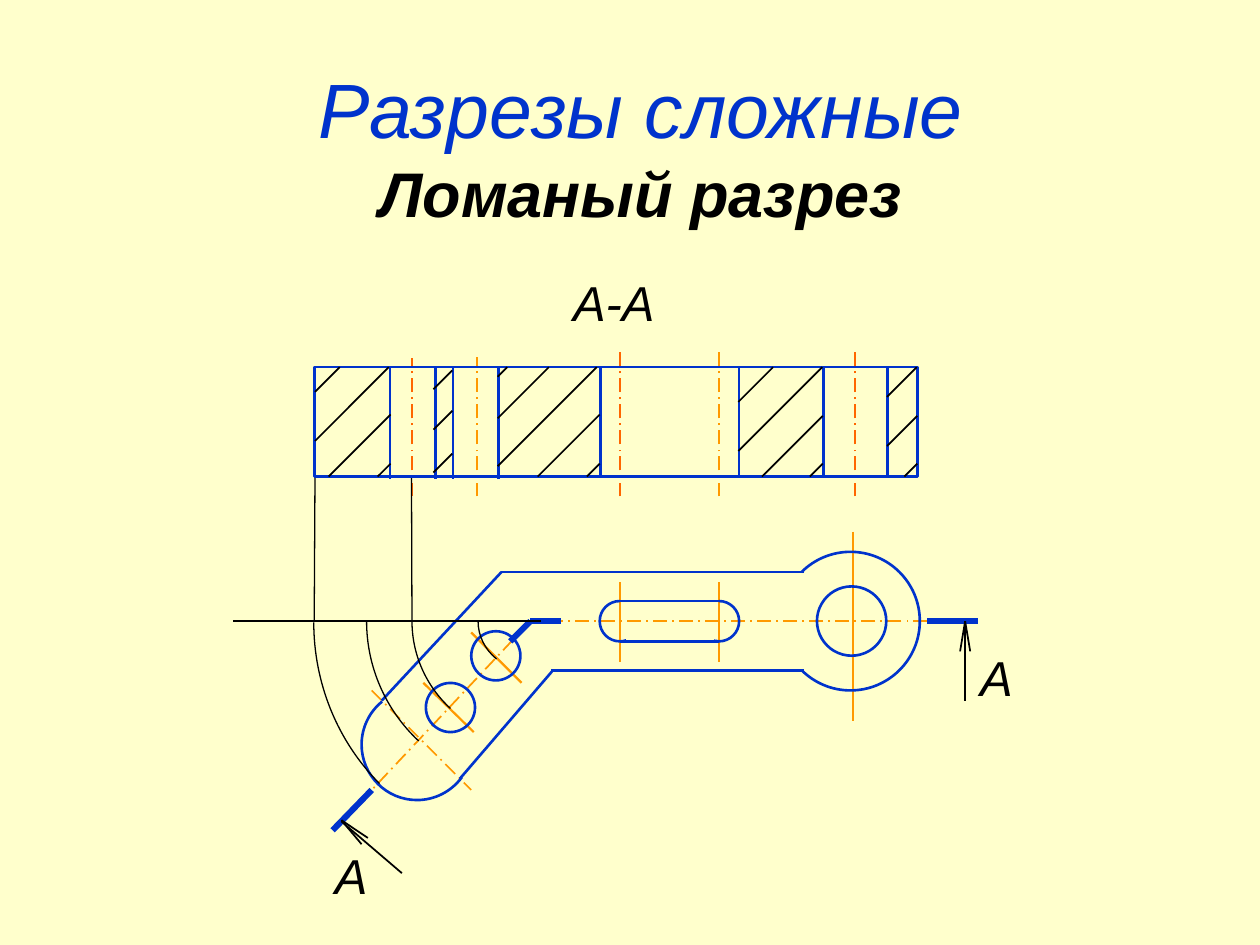
"""Build the slide on a broken section: section view A-A above the plan of a bent lever."""
from copy import deepcopy
from dataclasses import dataclass
from math import ceil, cos, floor, radians, sin, tan
from typing import NamedTuple, Optional

from lxml.etree import SubElement
from pptx import Presentation
from pptx.dml.color import RGBColor
from pptx.enum.dml import MSO_LINE_DASH_STYLE as Dash
from pptx.enum.shapes import MSO_CONNECTOR as Connector, MSO_SHAPE as Shape
from pptx.enum.text import MSO_ANCHOR as Anchor, MSO_AUTO_SIZE as AutoSize, PP_ALIGN as Align
from pptx.oxml.ns import qn
from pptx.util import Inches, Pt

CREAM = RGBColor(0xFF, 0xFF, 0xCC)
BLUE = RGBColor(0x00, 0x33, 0xCC)
BLACK = RGBColor(0x00, 0x00, 0x00)
AMBER = RGBColor(0xFF, 0x99, 0x00)
ORANGE = RGBColor(0xFF, 0x66, 0x00)
FONT = "Arial"

COLUMNS, ROWS = 1000, 750
CELL = Inches(10) // COLUMNS
TOP, BOTTOM, AXIS = 291.4, 378.2, 493
SLOT_LEFT, SLOT_RIGHT = 492, 570.6


class Pen(NamedTuple):
    color: RGBColor
    width: float
    dash: Optional[Dash] = None


class Line(NamedTuple):
    x1: float
    y1: float
    x2: float
    y2: float


class Circle(NamedTuple):
    left: float
    top: float
    size: float


class Arc(NamedTuple):
    x: float
    y: float
    radius: float
    start: float
    end: float
    stretch: float = 1

    def point(self, angle: float, lean: float = 0) -> list[int]:
        """Give the point at an angle, moved along the tangent by a share of the radius."""
        turn = radians(angle)
        across, down = cos(turn) - lean * sin(turn), sin(turn) + lean * cos(turn)
        return cells(self.x + self.radius * across, self.y + self.radius * self.stretch * down)

    def nodes(self) -> list[float]:
        """List the end angles and the quarter turns between them."""
        low, high = sorted((self.start, self.end))
        quarters = [90 * turn for turn in range(floor(low / 90) + 1, ceil(high / 90))]
        return sorted([low, *quarters, high], reverse=self.start > self.end)


@dataclass(frozen=True)
class Hatch:
    left: int
    right: int
    diagonals: tuple[int, ...]

    def lines(self) -> list[Line]:
        """Clip each 45 degree diagonal (column + row = constant) to the block."""
        spans = [(min(self.right, d - TOP), max(self.left, d - BOTTOM)) for d in self.diagonals]
        return [Line(x1, d - x1, x2, d - x2) for d, (x1, x2) in zip(self.diagonals, spans)]


@dataclass(frozen=True)
class Label:
    text: str
    left: int
    top: int
    width: int
    wrap: bool = False


OUTLINE = Pen(BLUE, 1.5)
CUT = Pen(BLUE, 3.5)
THIN = Pen(BLACK, 1)
PROJECTION = Pen(BLACK, 0.75)
CENTER = Pen(AMBER, 1)
CROSS = Pen(AMBER, 1.25)
CENTER_DASH = Pen(AMBER, 1, Dash.LONG_DASH_DOT)
SECTION_DASH = Pen(ORANGE, 1, Dash.LONG_DASH_DOT)

LINES = {
    CENTER_DASH: [
        Line(736, AXIS, 421, AXIS), Line(295, 548, 374, 627), Line(421, AXIS, 295, 627),
        Line(SLOT_RIGHT, 394, SLOT_RIGHT, 276), Line(378.4, 394, 378.4, 283),
    ],
    SECTION_DASH: [Line(x, 394, x, top) for x, top in ((492, 276), (678.6, 276), (327, 284))],
    CENTER: [Line(x, 462, x, 525) for x in (SLOT_RIGHT, SLOT_LEFT)] + [Line(677, 422, 677, 572)],
    OUTLINE: [
        Line(638, 454, 398, 454), Line(638, 532, 437, 532),
        Line(438, 533, 365, 618), Line(398, 454, 303, 556),
        *[Line(SLOT_LEFT, y, SLOT_RIGHT, y) for y in (477, 509)],
        *[Line(x, TOP, x, BOTTOM) for x in (704.6, 653.4, 586.6, 476.4)],
        *[Line(x, TOP, x, 380) for x in (395.4, 359.6, 345.4, 309.6)],
    ],
    CROSS: [Line(374, 502, 414, 542), Line(336, 542, 376, 581)],
    CUT: [
        Line(295, 627, 264, 659), Line(421, AXIS, 405, 509),
        Line(421, AXIS, 445, AXIS), Line(736, AXIS, 776, AXIS),
    ],
    THIN: [Line(429, AXIS, 185, AXIS)],
    PROJECTION: [Line(249.4, AXIS, 250, BOTTOM), Line(327, AXIS, 326.6, BOTTOM)],
}
ARCS = {
    OUTLINE: [
        Arc(675, AXIS, 55, 135, -135), Arc(SLOT_RIGHT, AXIS, 16, -90, 104),
        Arc(SLOT_LEFT, AXIS, 16, 270, 72), Arc(331, 591, 44, 36, 231),
    ],
    PROJECTION: [
        Arc(423, AXIS, 43.6, 131.5, 180, 0.92), Arc(421, AXIS, 94, 132.5, 180),
        Arc(421, AXIS, 130, 133, 180), Arc(420, 494, 171, 134, 180, 1.04),
    ],
}
CIRCLES = [Circle(648.4, 465.4, 55), Circle(338, 542, 39), Circle(374, 501, 39)]
HATCHES = [
    Hatch(250, 310, (600, 639, 678, 561)),
    Hatch(395, 476, (765, 805, 844, 727, 694)),
    Hatch(586, 653, (944, 983, 1021, 905)),
    Hatch(704, 728, (1019, 1058, 1096)),
    Hatch(344, 359, (719, 685, 653)),
]
ARROWS = [
    [Line(271, 652, 319, 693), Line(271, 651, 287, 670), Line(271, 651, 292, 665)],
    [Line(766, AXIS, 766, 556), Line(766, AXIS, 762, 517), Line(766, AXIS, 770, 517)],
]
LABELS = [Label("А-А", 445, 211, 123, True), Label("А", 256, 666, 44), Label("А", 768, 509, 44)]


def cells(*counts: float) -> list[int]:
    """Turn grid counts into lengths."""
    return [round(count * CELL) for count in counts]


def draw_line(shapes, line: Line, pen: Pen) -> None:
    """Draw one straight line without a shadow."""
    connector = shapes.add_connector(Connector.STRAIGHT, *cells(*line))
    apply_pen(connector, pen)
    SubElement(connector._element.spPr, qn("a:effectLst"))


def apply_pen(shape, pen: Pen) -> None:
    """Give a shape or connector its line."""
    shape.line.color.rgb = pen.color
    shape.line.width = Pt(pen.width)
    if pen.dash:
        shape.line.dash_style = pen.dash


def draw_outline(shape, pen: Pen) -> None:
    """Leave a shape with its line only."""
    shape.shadow.inherit = False
    shape.fill.background()
    apply_pen(shape, pen)


def draw_arc(shapes, arc: Arc, pen: Pen) -> None:
    """Draw a stroked curve over an unstroked sector, one Bezier segment per quarter."""
    nodes = arc.nodes()
    center = cells(arc.x, arc.y)
    builder = shapes.build_freeform(*arc.point(nodes[0]))
    builder.add_line_segments([*map(arc.point, nodes[1:]), center])
    shape = builder.convert_to_shape()
    draw_outline(shape, pen)
    curve = shape._element.spPr.find(".//" + qn("a:path"))
    for step in list(curve):
        curve.remove(step)

    def add_step(parent, tag: str, *points: list[int]) -> None:
        step = SubElement(parent, qn(tag))
        for x, y in points:
            SubElement(step, qn("a:pt"), x=str(x - shape.left), y=str(y - shape.top))

    add_step(curve, "a:moveTo", arc.point(nodes[0]))
    for start, end in zip(nodes, nodes[1:]):
        lean = 4 / 3 * tan(radians(end - start) / 4)
        add_step(curve, "a:cubicBezTo", arc.point(start, lean), arc.point(end, -lean), arc.point(end))
    sector = deepcopy(curve)
    curve.set("fill", "none")
    sector.set("stroke", "0")
    add_step(sector, "a:lnTo", center)
    add_step(sector, "a:close")
    curve.addnext(sector)


def add_run(para, text: str, size: int, color: RGBColor, bold: bool = False) -> None:
    """Add one italic run."""
    span = para.add_run()
    span.text = text
    font = span.font
    font.name, font.size, font.bold, font.italic = FONT, Pt(size), bold, True
    font.color.rgb = color


def draw_label(shapes, label: Label) -> None:
    """Write a view or section letter."""
    box = shapes.add_textbox(*cells(label.left, label.top, label.width, 57))
    box.text_frame.word_wrap = label.wrap
    add_run(box.text_frame.paragraphs[0], label.text, 28, BLACK)


def fill_title(title) -> None:
    """Place the title and write its two lines."""
    title.left, title.top, title.width, title.height = cells(58.6, 53.4, 900, 125)
    frame = title.text_frame
    frame.auto_size, frame.vertical_anchor = AutoSize.NONE, Anchor.MIDDLE
    para = frame.paragraphs[0]
    para.alignment, para.space_after = Align.CENTER, Pt(12)
    add_run(para, "Разрезы сложные", 44, BLUE)
    para.add_line_break()
    add_run(para, "Ломаный разрез", 36, BLACK, bold=True)


def main() -> None:
    """Assemble and save the deck."""
    deck = Presentation()
    deck.slide_width, deck.slide_height = cells(COLUMNS, ROWS)
    page = deck.slides.add_slide(deck.slide_layouts[5])
    page.background.fill.solid()
    page.background.fill.fore_color.rgb = CREAM
    shapes = page.shapes
    fill_title(shapes.title)
    for pen, lines in LINES.items():
        for line in lines:
            draw_line(shapes, line, pen)
    for circle in CIRCLES:
        place = cells(circle.left, circle.top, circle.size, circle.size)
        draw_outline(shapes.add_shape(Shape.OVAL, *place), OUTLINE)
    draw_outline(shapes.add_shape(Shape.RECTANGLE, *cells(249.4, TOP, 479, BOTTOM - TOP)), OUTLINE)
    for pen, arcs in ARCS.items():
        for arc in arcs:
            draw_arc(shapes, arc, pen)
    for line in (line for hatch in HATCHES for line in hatch.lines()):
        draw_line(shapes, line, THIN)
    for arrow in ARROWS:
        group = shapes.add_group_shape()
        for line in arrow:
            draw_line(group.shapes, line, THIN)
    for label in LABELS:
        draw_label(shapes, label)
    deck.save("out.pptx")


if __name__ == "__main__":
    main()
